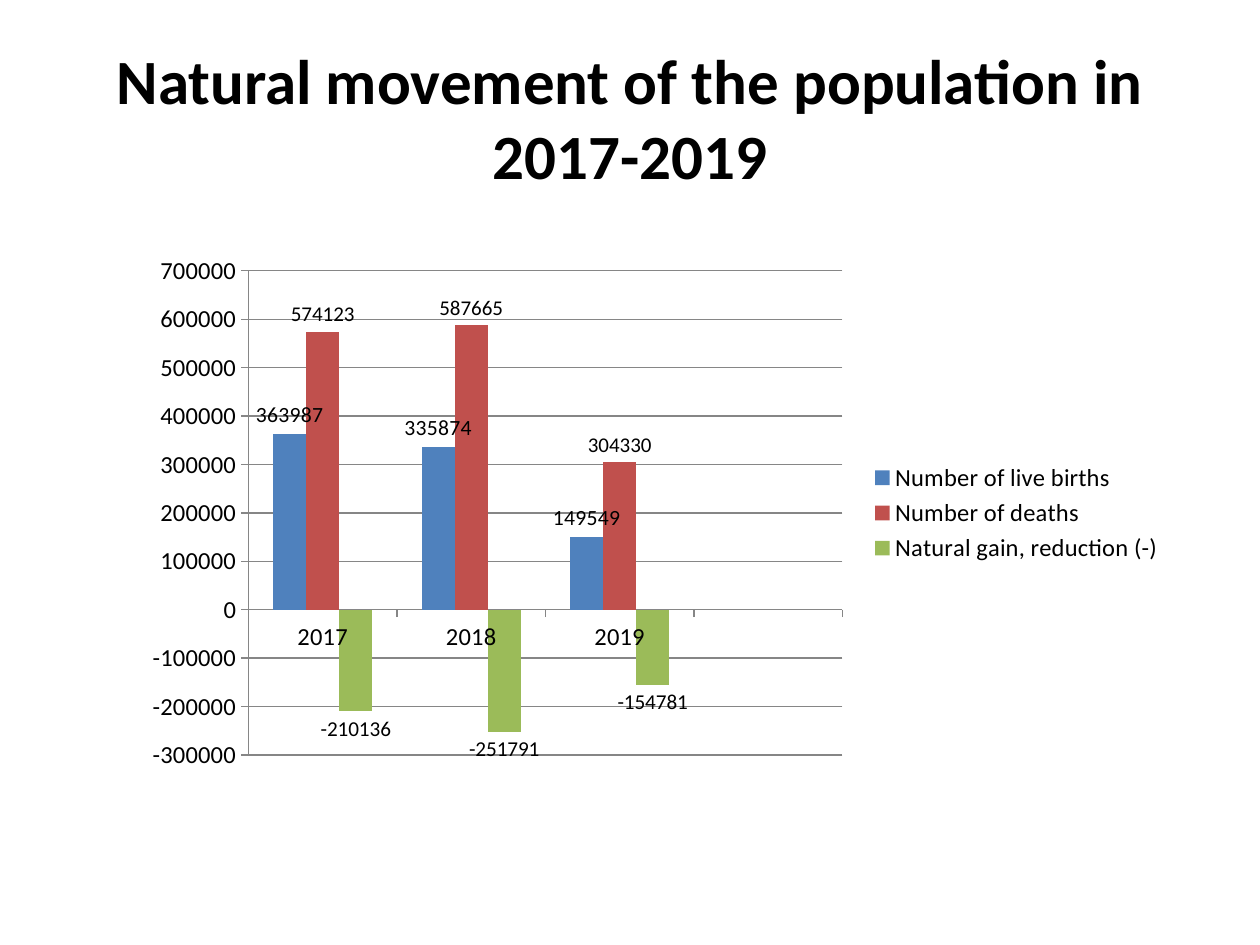
from lxml import etree
from pptx import Presentation
from pptx import util as u
from pptx.chart import data as chart_data
from pptx.dml import color
from pptx.enum import chart as chart_enum
from pptx.enum import text
from pptx.oxml import ns

EMU_PER_PX = 914400 / 126
FONT = "Calibri"
COLORS = {
    "text": "000000",
    "line": "868686",
    "births": "4F81BD",
    "deaths": "C0504D",
    "gain": "9BBB59",
}
YEARS = ["2017", "2018", "2019", ""]
SERIES = [
    ("Number of live births", [363987, 335874, 149549, None], "births", 12.4),
    ("Number of deaths", [574123, 587665, 304330, None], "deaths", 12),
    ("Natural gain, reduction (-)", [-210136, -251791, -154781, None], "gain", 12.1),
]


def px(length):
    return u.Emu(round(length * EMU_PER_PX))


def rgb(name):
    return color.RGBColor.from_string(COLORS[name])


def format_font(font, size, bold=False):
    font.name = FONT
    font.size = u.Pt(size)
    font.bold = bold
    font.color.rgb = rgb("text")


def add_title(slide, left, top, width, height):
    title = slide.shapes.title
    title.left, title.top, title.width, title.height = map(px, (left, top, width, height))
    frame = title.text_frame
    frame.word_wrap = True
    frame.vertical_anchor = text.MSO_ANCHOR.MIDDLE
    paragraph = frame.paragraphs[0]
    paragraph.alignment = text.PP_ALIGN.CENTER
    run = paragraph.add_run()
    run.text = "Natural movement of the population in 2017-2019"
    format_font(run.font, 36, bold=True)


def format_axis(axis):
    format_font(axis.tick_labels.font, 14)
    axis.major_tick_mark = chart_enum.XL_TICK_MARK.OUTSIDE
    axis.minor_tick_mark = chart_enum.XL_TICK_MARK.NONE
    axis.format.line.color.rgb = rgb("line")
    axis.format.line.width = u.Pt(0.75)


def set_plot_layout(chart, **fractions):
    plot_area = chart.plots[0]._element.getparent()
    for old_layout in plot_area.findall(ns.qn("c:layout")):
        plot_area.remove(old_layout)
    layout = etree.Element(ns.qn("c:layout"))
    manual = etree.SubElement(layout, ns.qn("c:manualLayout"))
    settings = {"layoutTarget": "inner", "xMode": "edge", "yMode": "edge", **fractions}
    for name, value in settings.items():
        etree.SubElement(manual, ns.qn(f"c:{name}")).set("val", str(value))
    plot_area.insert(0, layout)


def add_population_chart(slide, left, top, width, height):
    data = chart_data.CategoryChartData()
    data.categories = YEARS
    for name, values, _, _ in SERIES:
        data.add_series(name, values)
    chart = slide.shapes.add_chart(
        chart_enum.XL_CHART_TYPE.COLUMN_CLUSTERED,
        *map(px, (left, top, width, height)), data,
    ).chart
    chart.has_title = False
    format_font(chart.font, 10)

    plot = chart.plots[0]
    plot.vary_by_categories = False
    plot.gap_width = 150
    plot.overlap = 0
    for series, (_, _, color_name, label_size) in zip(plot.series, SERIES):
        series.invert_if_negative = False
        series.format.fill.solid()
        series.format.fill.fore_color.rgb = rgb(color_name)
        labels = series.data_labels
        labels.show_value = True
        labels.position = chart_enum.XL_LABEL_POSITION.OUTSIDE_END
        format_font(labels.font, label_size)

    format_axis(chart.category_axis)
    value_axis = chart.value_axis
    format_axis(value_axis)
    value_axis.minimum_scale = -300000
    value_axis.maximum_scale = 700000
    value_axis.major_unit = 100000
    value_axis.has_major_gridlines = True
    value_axis.major_gridlines.format.line.color.rgb = rgb("line")
    value_axis.major_gridlines.format.line.width = u.Pt(0.75)

    chart.has_legend = True
    chart.legend.position = chart_enum.XL_LEGEND_POSITION.RIGHT
    chart.legend.include_in_layout = False
    format_font(chart.legend.font, 14)
    set_plot_layout(chart, x=0.11, y=0.05, w=0.57, h=0.9)


def main():
    presentation = Presentation()
    presentation.slide_width = px(1260)
    presentation.slide_height = px(945)
    slide = presentation.slides.add_slide(presentation.slide_layouts[5])
    add_title(slide, 63, 38, 1134, 158)
    add_population_chart(slide, 134, 244, 1042, 538)
    presentation.save("out.pptx")


if __name__ == "__main__":
    main()
